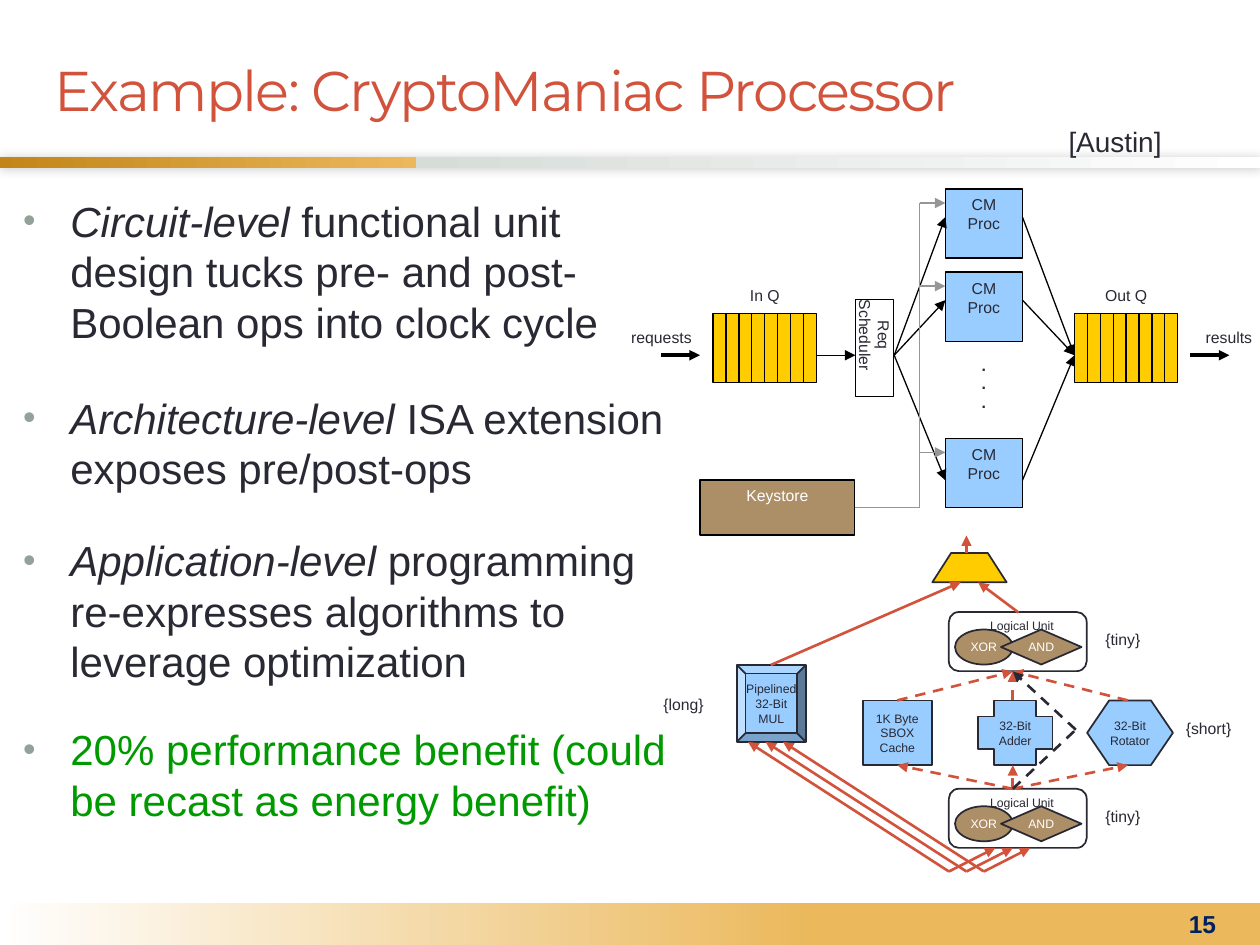
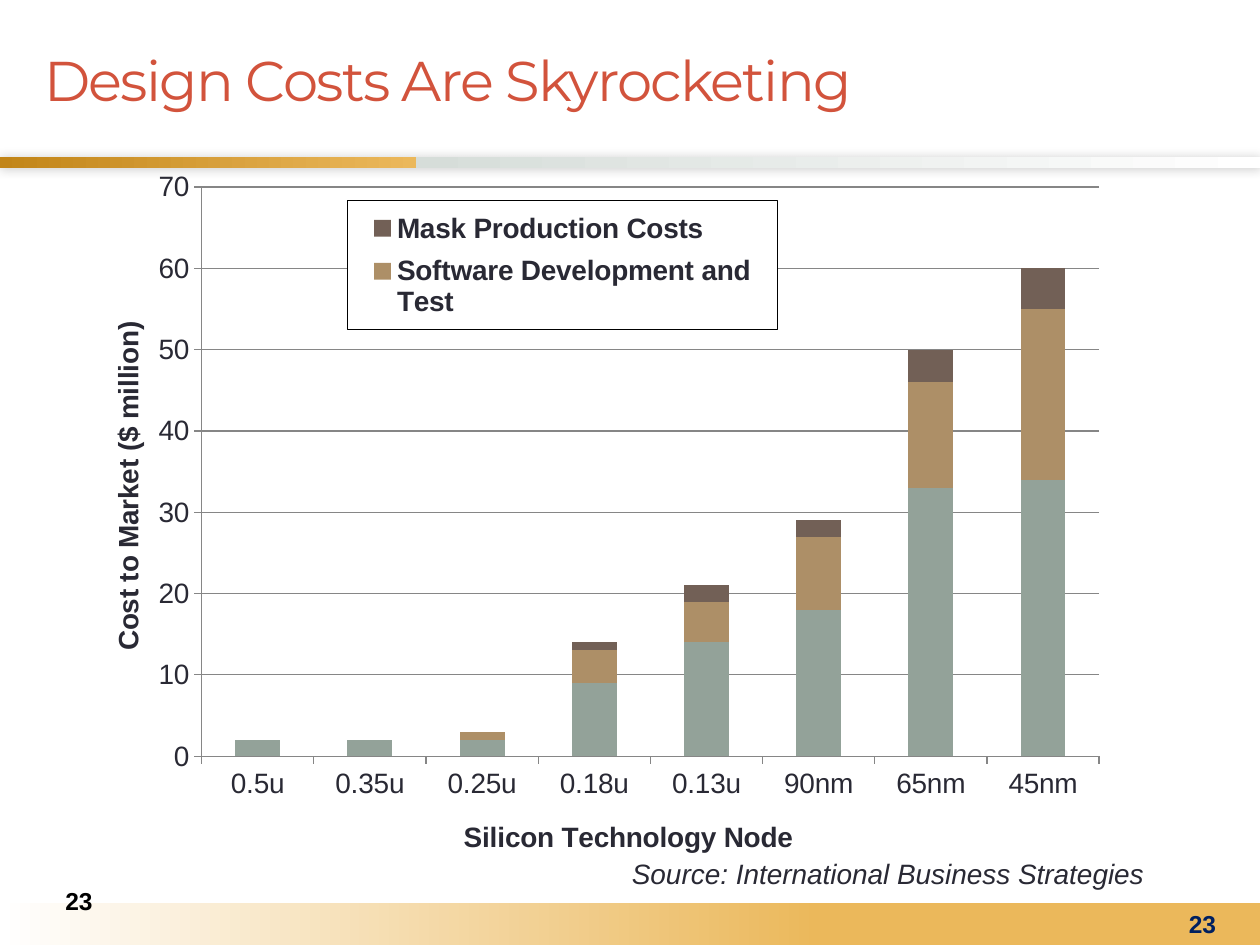
"""Builds two slides: a processor diagram and a design cost chart."""
from lxml.etree import SubElement
from pptx import Presentation
from pptx.chart.data import CategoryChartData
from pptx.dml.color import RGBColor
from pptx.enum.chart import XL_CHART_TYPE, XL_LEGEND_POSITION, XL_TICK_MARK
from pptx.enum.dml import MSO_LINE
from pptx.enum.shapes import MSO_CONNECTOR, MSO_SHAPE
from pptx.enum.text import MSO_ANCHOR, MSO_AUTO_SIZE, PP_ALIGN
from pptx.oxml import parse_xml
from pptx.oxml.ns import nsdecls, qn
from pptx.util import Pt

COLORS = {
    "text": "292934", "title": "D2533C", "gold": "EBB85B", "dark gold": "C28518",
    "mist": "D6DDD9", "white": "FFFFFF", "black": "000000", "navy": "002060",
    "green": "009900", "sage": "93A299", "tan": "AD8F67", "brown": "726056",
    "blue": "99CCFF", "yellow": "FFCC00", "gray": "969696", "grid": "868686",
}
FONT = "Arial"


def rgb(name):
    return RGBColor.from_string(COLORS[name])


def style_font(font, size, color="text", bold=False, italic=False, name=FONT):
    font.name, font.size, font.bold, font.italic = name, Pt(size), bold, italic
    font.color.rgb = rgb(color)


def write(box, text, size, color="text", align=PP_ALIGN.CENTER, anchor=MSO_ANCHOR.TOP,
          wrap=True, inset=None, bold=False, italic=False):
    frame = box.text_frame
    frame.text = text
    frame.word_wrap = wrap
    frame.vertical_anchor = anchor
    if inset is not None:
        frame.margin_left = frame.margin_right = Pt(inset)
        frame.margin_top = frame.margin_bottom = Pt(inset)
    for para in frame.paragraphs:
        para.alignment = align
        style_font(para.font, size, color, bold, italic)


def add_text(page, text, left, top, width, height, size, **style):
    box = page.shapes.add_textbox(Pt(left), Pt(top), Pt(width), Pt(height))
    write(box, text, size, **style)


def paint(shape, fill, line, weight):
    shape.shadow.inherit = False
    if fill:
        shape.fill.solid()
        shape.fill.fore_color.rgb = rgb(fill)
    else:
        shape.fill.background()
    shape.line.color.rgb = rgb(line)
    shape.line.width = Pt(weight)


def add_block(page, kind, left, top, width, height, fill, line="black", weight=0.75):
    shape = page.shapes.add_shape(kind, Pt(left), Pt(top), Pt(width), Pt(height))
    paint(shape, fill, line, weight)
    return shape


def add_unit(page, kind, left, top, width, height, text, fill="blue", color="text"):
    shape = add_block(page, kind, left, top, width, height, fill, "text", 1)
    write(shape, text, 7, color, anchor=MSO_ANCHOR.MIDDLE, wrap=False)
    return shape


def add_line(page, start, end, color="black", weight=0.75, arrow=True, dashed=False):
    line = page.shapes.add_connector(
        MSO_CONNECTOR.STRAIGHT, *(Pt(value) for value in (*start, *end)))
    line.line.color.rgb = rgb(color)
    line.line.width = Pt(weight)
    if dashed:
        line.line.dash_style = MSO_LINE.DASH
    properties = line.element.spPr
    if arrow:
        SubElement(properties.find(qn("a:ln")), qn("a:tailEnd"), type="triangle")
    SubElement(properties, qn("a:effectLst"))


def add_band(page, top, height, stops):
    band = page.shapes.add_shape(MSO_SHAPE.RECTANGLE, 0, Pt(top), Pt(720), Pt(height))
    band.shadow.inherit = False
    band.line.fill.background()
    band.fill.gradient()
    band.fill.gradient_angle = 0
    stop_list = band.element.spPr.find(qn("a:gradFill")).find(qn("a:gsLst"))
    stop_list.clear()
    for percent, color in stops:
        stop = SubElement(stop_list, qn("a:gs"), pos=str(percent * 1000))
        SubElement(stop, qn("a:srgbClr"), val=COLORS[color])
    return band


def add_soft_shadow(shape):
    effects = shape.element.spPr.find(qn("a:effectLst"))
    shadow = SubElement(effects, qn("a:outerShdw"), blurRad=str(Pt(6)), dist="0", dir="13500000")
    color = SubElement(shadow, qn("a:srgbClr"), val=COLORS["black"])
    SubElement(color, qn("a:alpha"), val="20000")


def place_placeholder(box, left, top, width, height):
    box.left, box.top, box.width, box.height = Pt(left), Pt(top), Pt(width), Pt(height)
    box.text_frame.auto_size = MSO_AUTO_SIZE.NONE


def add_page(deck, layout, title, title_place, number):
    page = deck.slides.add_slide(deck.slide_layouts[layout])
    add_soft_shadow(add_band(page, 90, 6, [
        (0, "dark gold"), (33, "gold"), (33, "mist"), (100, "white")]))
    add_band(page, 516, 24, [(0, "white"), (65, "gold"), (100, "gold")])
    box = page.shapes.title
    place_placeholder(box, *title_place)
    write(box, title, 32, align=PP_ALIGN.LEFT, anchor=MSO_ANCHOR.MIDDLE)
    para = box.text_frame.paragraphs[0]
    style_font(para.font, 32, "title", name="Montserrat")
    para.runs[0].font._element.set("spc", "-100")
    add_text(page, number, 636, 516, 66, 24, 14, color="navy", bold=True,
             align=PP_ALIGN.RIGHT, anchor=MSO_ANCHOR.MIDDLE)
    return page


def add_bullets(page, bullets):
    box = page.placeholders[1]
    place_placeholder(box, 6, 108, 384, 370)
    frame = box.text_frame
    for index, (gap, lead, rest, color) in enumerate(bullets):
        para = frame.paragraphs[0] if index == 0 else frame.add_paragraph()
        properties = para._p.get_or_add_pPr()
        properties.set("marL", str(Pt(27)))
        properties.set("indent", str(-Pt(27)))
        para.space_before = Pt(gap)
        bullet_color = SubElement(properties, qn("a:buClr"))
        SubElement(bullet_color, qn("a:srgbClr"), val=COLORS["sage"])
        SubElement(properties, qn("a:buSzPct"), val="85000")
        SubElement(properties, qn("a:buChar"), char="•")
        style_font(para.font, 24, color)
        if lead:
            span = para.add_run()
            span.text, span.font.italic = lead, True
        para.add_run().text = rest


def add_queue(page, left, name):
    top, width, height, slots = 179, 59, 39.5, 8
    add_block(page, MSO_SHAPE.RECTANGLE, left, top, width, height, "yellow")
    for slot in range(1, slots):
        x = left + slot * width / slots
        add_line(page, (x, top), (x, top + height), arrow=False)
    add_text(page, name, left, 163.5, width, 16, 9, inset=0)


def add_system(page):
    middle, bus = 203, 525.5
    for top, port in ((108, 124), (155.5, 171.5), (250.5, 274.5)):
        processor = add_block(page, MSO_SHAPE.RECTANGLE, 540.25, top, 44, 39.5, "blue")
        write(processor, "CM\nProc", 9)
        add_line(page, (511, middle), (540.25, port))
        add_line(page, (584.25, port), (614, middle))
        add_line(page, (bus, top + 8), (540.25, top + 8), "gray")
    keystore = add_block(page, MSO_SHAPE.RECTANGLE, 400, 274.25, 88.5, 31.5, "tan")
    write(keystore, "Keystore", 9, "white")
    add_line(page, (488.5, 290), (bus, 290), "gray", arrow=False)
    add_line(page, (bus, 290), (bus, 116), "gray", arrow=False)
    scheduler = add_block(page, MSO_SHAPE.RECTANGLE, 488.75, 171.25, 22, 55.25, "white")
    write(scheduler, "Req Scheduler", 9, inset=0)
    scheduler.text_frame._txBody.bodyPr.set("vert", "eaVert")
    add_queue(page, 407.5, "In Q")
    add_queue(page, 614, "Out Q")
    add_line(page, (466.5, middle), (488.75, middle))
    for text, center, start in (("requests", 378, 377.75), ("results", 702.25, 680.25)):
        add_text(page, text, center - 18, 187.25, 36, 16, 9, inset=0)
        add_line(page, (start, middle), (start + 22.25, middle), weight=2)
    add_text(page, ".\n.\n.", 555, middle, 14.5, 39.5, 9, inset=0, bold=True)


def add_logical_unit(page, top):
    add_unit(page, MSO_SHAPE.OVAL, 545.75, top + 10, 33, 20, "XOR", "tan", "white")
    add_unit(page, MSO_SHAPE.DIAMOND, 572, top + 10, 46, 20, "AND", "tan", "white")
    add_block(page, MSO_SHAPE.ROUNDED_RECTANGLE, 542.25, top, 78.75, 33.75, None, "text", 1)
    add_text(page, "Logical Unit", 558.75, top, 55, 17, 7, align=PP_ALIGN.LEFT, wrap=False)
    add_text(page, "{tiny}", 624.5, top + 5.75, 42.5, 20, 9,
             align=PP_ALIGN.LEFT, anchor=MSO_ANCHOR.MIDDLE)


def add_datapath(page):
    upper, lower = (578.75, 383.75), (578.75, 450.75)
    add_unit(page, MSO_SHAPE.BEVEL, 421, 380, 39.5, 44, "Pipelined\n32-Bit\nMUL")
    add_unit(page, MSO_SHAPE.RECTANGLE, 493, 400.25, 39.5, 37, "1K Byte\nSBOX\nCache")
    add_unit(page, MSO_SHAPE.CROSS, 558.75, 400.25, 42.75, 37, "32-Bit\nAdder")
    rotator = add_unit(page, MSO_SHAPE.HEXAGON, 621.25, 400.25, 49, 37, "32-Bit\nRotator")
    rotator.adjustments[0] = 0.34
    for top in (349.75, 450.75):
        add_logical_unit(page, top)
    for text, left, top in (("{long}", 372, 392.5), ("{short}", 670.5, 406)):
        add_text(page, text, left, top, 49, 20, 9,
                 align=PP_ALIGN.LEFT, anchor=MSO_ANCHOR.MIDDLE)
    builder = page.shapes.build_freeform(Pt(532.75), Pt(332.75))
    builder.add_line_segments(
        [(Pt(x), Pt(y)) for x, y in ((543.5, 316), (564.5, 316), (575.25, 332.75))])
    paint(builder.convert_to_shape(), "yellow", "text", 1)
    solid = [((440.5, 380), (549, 332.75)), ((582, 350), (559, 332.75)),
             ((552.25, 316), (552.25, 306))]
    for shift in (0, 10, 20):
        corner = (542.25 + shift, 498)
        solid += [(corner, (427.5 + shift, 424)), (corner, (568.75 + shift, 484.5))]
    for start, end in solid:
        add_line(page, start, end, "title", 1.5)
    for x in (512.75, 578.75, 644.5):
        add_line(page, (x, 400.25), upper, "title", 1.5, dashed=True)
        add_line(page, lower, (x, 437.25), "title", 1.5, dashed=True)
    add_line(page, lower, (614.75, 417), "text", 1.5, arrow=False, dashed=True)
    add_line(page, (614.75, 417), upper, "text", 1.5, dashed=True)


def set_layout(element, index, target=None, **percents):
    for old in element.findall(qn("c:layout")):
        element.remove(old)
    layout = element.makeelement(qn("c:layout"))
    element.insert(index, layout)
    manual = SubElement(layout, qn("c:manualLayout"))
    if target:
        SubElement(manual, qn("c:layoutTarget"), val=target)
    for mode in ("xMode", "yMode"):
        SubElement(manual, qn(f"c:{mode}"), val="edge")
    for name, percent in percents.items():
        SubElement(manual, qn(f"c:{name}"), val=f"{percent / 100:.3f}")


def style_axis(axis, title, x, y):
    style_font(axis.tick_labels.font, 16)
    axis.major_tick_mark = XL_TICK_MARK.OUTSIDE
    axis.format.line.color.rgb = rgb("grid")
    axis.axis_title.text_frame.text = title
    style_font(axis.axis_title.text_frame.paragraphs[0].font, 16, bold=True)
    set_layout(axis.axis_title._element, 1, x=x, y=y)


def style_legend(chart):
    chart.has_legend = True
    legend = chart.legend
    legend.position = XL_LEGEND_POSITION.RIGHT
    legend.include_in_layout = False
    style_font(legend.font, 16, bold=True)
    element = legend._element
    element.insert(1, parse_xml(
        f'<c:legendEntry {nsdecls("c")}><c:idx val="0"/><c:delete val="1"/></c:legendEntry>'))
    set_layout(element, 2, x=23.6, y=5.4, w=41.8, h=18.5)
    element.find(qn("c:txPr")).addprevious(parse_xml(
        f'<c:spPr {nsdecls("c", "a")}><a:solidFill><a:srgbClr val="{COLORS["white"]}"/>'
        f'</a:solidFill><a:ln w="3175"><a:solidFill><a:srgbClr val="{COLORS["black"]}"/>'
        '</a:solidFill></a:ln></c:spPr>'))


def add_cost_chart(page):
    costs = [
        ("Design, Layout, and Verification", "sage", (2, 2, 2, 9, 14, 18, 33, 34)),
        ("Software Development and Test", "tan", (0, 0, 1, 4, 5, 9, 13, 21)),
        ("Mask Production Costs", "brown", (0, 0, 0, 1, 2, 2, 4, 5)),
    ]
    data = CategoryChartData(number_format="0")
    data.categories = ["0.5u", "0.35u", "0.25u", "0.18u", "0.13u", "90nm", "65nm", "45nm"]
    for name, _, values in costs:
        data.add_series(name, values)
    chart = page.shapes.add_chart(
        XL_CHART_TYPE.COLUMN_STACKED, Pt(60), Pt(93), Pt(587.5), Pt(399), data).chart
    style_font(chart.font, 10)
    chart.has_title = False
    plot = chart.plots[0]
    plot.gap_width, plot.overlap, plot.vary_by_categories = 150, 100, False
    for series, (_, color, _) in zip(plot.series, costs):
        series.format.fill.solid()
        series.format.fill.fore_color.rgb = rgb(color)
    style_axis(chart.category_axis, "Silicon Technology Node", 34.4, 93.5)
    axis = chart.value_axis
    style_axis(axis, "Cost to Market ($ million)", -0.2, 22.2)
    axis.minimum_scale, axis.maximum_scale, axis.major_unit = 0, 70, 10
    axis.major_gridlines.format.line.color.rgb = rgb("grid")
    set_layout(chart._chartSpace.chart.plotArea, 0, "inner", x=9.4, y=3.5, w=87.3, h=81.7)
    style_legend(chart)


def main():
    deck = Presentation()
    deck.slide_width, deck.slide_height = Pt(720), Pt(540)
    page = add_page(deck, 1, "Example: CryptoManiac Processor", (24, 12, 648, 78), "15")
    add_bullets(page, [
        (0, "Circuit-level", " functional unit design tucks pre- and post-Boolean ops "
            "into clock cycle", "text"),
        (26, "Architecture-level", " ISA extension exposes pre/post-ops", "text"),
        (24, "Application-level", " programming re-expresses algorithms to leverage "
             "optimization", "text"),
        (21.5, "", "20% performance benefit (could be recast as energy benefit)", "green"),
    ])
    add_system(page)
    add_datapath(page)
    add_text(page, "[Austin]", 603.5, 67.5, 68.5, 26.5, 16, align=PP_ALIGN.LEFT, wrap=False)

    page = add_page(deck, 5, "Design Costs Are Skyrocketing", (18, 0, 696, 90), "23")
    add_cost_chart(page)
    add_text(page, "Source: International Business Strategies", 354, 486, 311, 26.5, 16,
             align=PP_ALIGN.LEFT, wrap=False, italic=True)
    add_text(page, "23", 0, 500, 60, 29, 14, color="black", bold=True,
             align=PP_ALIGN.RIGHT, anchor=MSO_ANCHOR.MIDDLE)
    deck.save("out.pptx")


if __name__ == "__main__":
    main()
